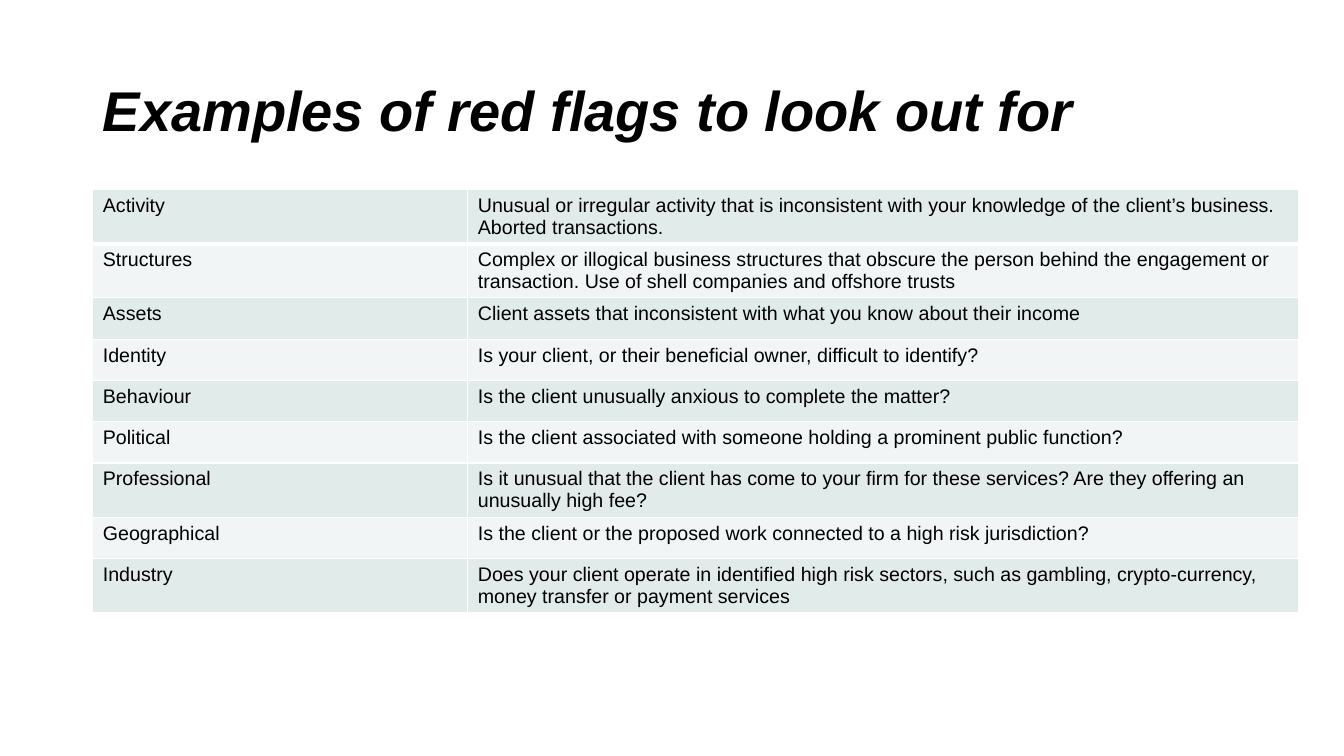
from dataclasses import dataclass

from lxml import etree
from pptx import Presentation
from pptx.dml.color import RGBColor
from pptx.enum import text
from pptx.oxml import ns
from pptx.util import Inches, Pt

TITLE = "Examples of red flags to look out for"
RED_FLAGS = [
    ("Activity", "Unusual or irregular activity that is inconsistent with your knowledge "
                 "of the client’s business. Aborted transactions."),
    ("Structures", "Complex or illogical business structures that obscure the person behind "
                   "the engagement or transaction. Use of shell companies and offshore trusts"),
    ("Assets", "Client assets that inconsistent with what you know about their income"),
    ("Identity", "Is your client, or their beneficial owner, difficult to identify?"),
    ("Behaviour", "Is the client unusually anxious to complete the matter?"),
    ("Political", "Is the client associated with someone holding a prominent public function?"),
    ("Professional", "Is it unusual that the client has come to your firm for these services? "
                     "Are they offering an unusually high fee?"),
    ("Geographical", "Is the client or the proposed work connected to a high risk jurisdiction?"),
    ("Industry", "Does your client operate in identified high risk sectors, such as gambling, "
                 "crypto-currency, money transfer or payment services"),
]


@dataclass(frozen=True)
class Theme:
    font: str = "Arial"
    ink: str = "000000"
    bands: tuple = ("E1EBEA", "F1F5F5")
    border: str = "FFFFFF"
    title_size: int = 40
    body_size: int = 14
    thin: int = 1
    thick: int = 3


THEME = Theme()
LEFT, WIDTH = 0.92, 11.96
TITLE_TOP, TITLE_HEIGHT = 0.4, 1.45
TABLE_TOP, ROW_HEIGHT = 1.88, 0.41
COLUMNS = (3.72, 8.24)


def set_font(p, size, emphasis=False):
    f = p.font
    f.name, f.size = THEME.font, Pt(size)
    f.bold = f.italic = emphasis
    f.color.rgb = RGBColor.from_string(THEME.ink)


def set_borders(cell, top, bottom):
    """Add the four cell borders, which must come before the fill."""
    tcPr = cell._tc.get_or_add_tcPr()
    widths = {"lnL": THEME.thin, "lnR": THEME.thin, "lnT": top, "lnB": bottom}
    for i, (tag, width) in enumerate(widths.items()):
        ln = etree.Element(ns.qn("a:" + tag), w=str(Pt(width)))
        fill = etree.SubElement(ln, ns.qn("a:solidFill"))
        etree.SubElement(fill, ns.qn("a:srgbClr"), val=THEME.border)
        tcPr.insert(i, ln)


def add_title(s):
    sp = s.shapes.title
    sp.left, sp.top = Inches(LEFT), Inches(TITLE_TOP)
    sp.width, sp.height = Inches(WIDTH), Inches(TITLE_HEIGHT)
    tf = sp.text_frame
    tf.text = TITLE
    tf.word_wrap = True
    tf.auto_size = text.MSO_AUTO_SIZE.NONE
    tf.vertical_anchor = text.MSO_ANCHOR.MIDDLE
    p = tf.paragraphs[0]
    p.alignment = text.PP_ALIGN.LEFT
    p.line_spacing = 0.9
    set_font(p, THEME.title_size, emphasis=True)


def add_flag_table(s):
    n = len(RED_FLAGS)
    table = s.shapes.add_table(n, len(COLUMNS), Inches(LEFT), Inches(TABLE_TOP),
                               Inches(WIDTH), Inches(ROW_HEIGHT * n)).table
    table.first_row = table.horz_banding = False
    for column, width in zip(table.columns, COLUMNS):
        column.width = Inches(width)
    for i, (row, entry) in enumerate(zip(table.rows, RED_FLAGS)):
        row.height = Inches(ROW_HEIGHT)
        # The line under the first row is heavier
        top = THEME.thick if i == 1 else THEME.thin
        bottom = THEME.thick if i == 0 else THEME.thin
        for cell, words in zip(row.cells, entry):
            cell.text = words
            set_font(cell.text_frame.paragraphs[0], THEME.body_size)
            cell.fill.solid()
            cell.fill.fore_color.rgb = RGBColor.from_string(THEME.bands[i % 2])
            set_borders(cell, top, bottom)


def main():
    prs = Presentation()
    prs.slide_width, prs.slide_height = Inches(13.33), Inches(7.5)
    s = prs.slides.add_slide(prs.slide_layouts[5])
    add_title(s)
    add_flag_table(s)
    prs.save("out.pptx")


if __name__ == "__main__":
    main()
